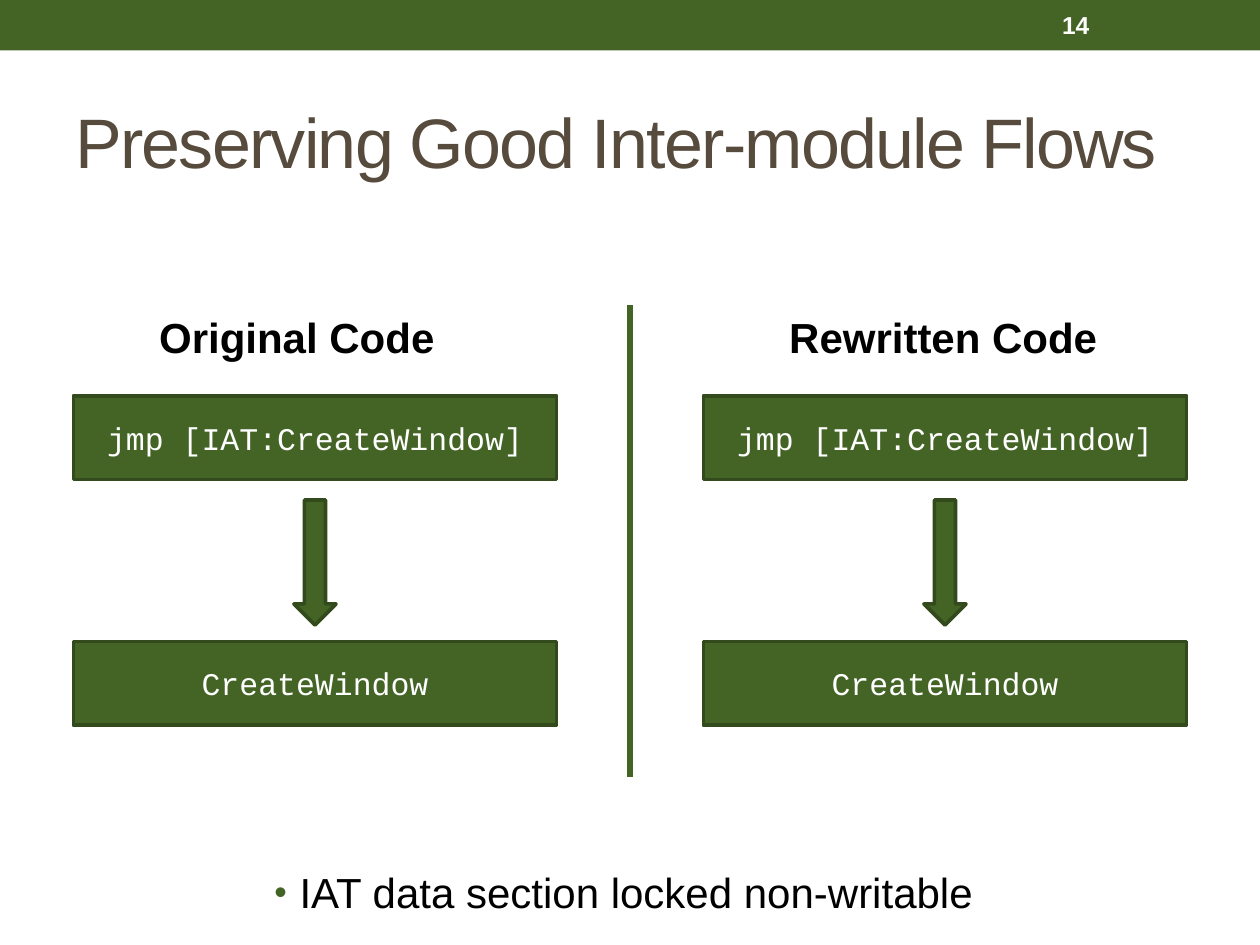
from dataclasses import dataclass

from lxml import etree
from pptx import Presentation
from pptx.dml.color import RGBColor
from pptx.enum.shapes import MSO_CONNECTOR, MSO_SHAPE
from pptx.enum.text import MSO_ANCHOR, PP_ALIGN
from pptx.oxml.ns import qn
from pptx.util import Cm, Pt

RECTANGLE = MSO_SHAPE.RECTANGLE
DOWN_ARROW = MSO_SHAPE.DOWN_ARROW
STRAIGHT = MSO_CONNECTOR.STRAIGHT
TOP = MSO_ANCHOR.TOP
MIDDLE = MSO_ANCHOR.MIDDLE
CENTER = PP_ALIGN.CENTER

GREEN = "446426"
DARK_GREEN = "324A1C"
BROWN = "564B3C"
WHITE = "FFFFFF"
BLACK = "000000"

SLIDE_WIDTH = 25.4
SLIDE_HEIGHT = 19.05
COLUMN_TOP = 6.15
COLUMN_BOTTOM = 15.67


@dataclass
class Area:
    left: float
    top: float
    width: float
    height: float

    def lengths(self):
        return Cm(self.left), Cm(self.top), Cm(self.width), Cm(self.height)


@dataclass
class Style:
    size: float
    color: str
    font: str = "Arial"
    bold: bool = False


@dataclass
class Column:
    heading: str
    center: float
    steps: tuple[str, str] = ("jmp [IAT:CreateWindow]", "CreateWindow")


HEADING = Style(24, BLACK, bold=True)
CODE = Style(18, WHITE, "Courier New")
COLUMNS = (
    Column("Original Code", SLIDE_WIDTH / 4),
    Column("Rewritten Code", SLIDE_WIDTH * 3 / 4),
)


def rgb(color: str) -> RGBColor:
    return RGBColor.from_string(color)


def write(shape, text: str, style: Style, anchor=MIDDLE):
    frame = shape.text_frame
    frame.word_wrap = True
    frame.vertical_anchor = anchor
    frame.text = text
    para = frame.paragraphs[0]
    font = para.runs[0].font
    font.name = style.font
    font.size = Pt(style.size)
    font.bold = style.bold
    font.color.rgb = rgb(style.color)
    return para


def add_text(slide, area: Area, text: str, style: Style, anchor=MIDDLE):
    box = slide.shapes.add_textbox(*area.lengths())
    return write(box, text, style, anchor)


def add_block(slide, kind, area: Area, outlined: bool = True):
    block = slide.shapes.add_shape(kind, *area.lengths())
    block.shadow.inherit = False
    block.fill.solid()
    block.fill.fore_color.rgb = rgb(GREEN)
    if outlined:
        block.line.color.rgb = rgb(DARK_GREEN)
        block.line.width = Pt(2.08)
    else:
        block.line.fill.background()
    return block


def add_divider(slide) -> None:
    middle = Cm(SLIDE_WIDTH / 2)
    divider = slide.shapes.add_connector(
        STRAIGHT, middle, Cm(COLUMN_TOP), middle, Cm(COLUMN_BOTTOM)
    )
    divider.line.color.rgb = rgb(GREEN)
    divider.line.width = Pt(3)
    etree.SubElement(divider.element.spPr, qn("a:effectLst"))


def add_column(slide, column: Column) -> None:
    def centered(top: float, width: float, height: float) -> Area:
        return Area(column.center - width / 2, top, width, height)

    add_text(slide, centered(COLUMN_TOP, 6.78, 1.27), column.heading, HEADING, TOP)
    for top, step in zip((7.98, 12.93), column.steps):
        block = add_block(slide, RECTANGLE, centered(top, 9.74, 1.69))
        write(block, step, CODE).alignment = CENTER
    add_block(slide, DOWN_ARROW, centered(10.08, 0.85, 2.52))


def add_bullet(para, color: str) -> None:
    para.space_before = Pt(5)
    properties = para._p.get_or_add_pPr()
    indent = Cm(0.51)
    properties.set("marL", str(indent))
    properties.set("indent", str(-indent))
    bullet_color = etree.SubElement(properties, qn("a:buClr"))
    etree.SubElement(bullet_color, qn("a:srgbClr"), val=color)
    etree.SubElement(properties, qn("a:buSzPct"), val="85000")
    etree.SubElement(properties, qn("a:buFont"), typeface="Arial")
    etree.SubElement(properties, qn("a:buChar"), char="•")


def main() -> None:
    deck = Presentation()
    deck.slide_width = Cm(SLIDE_WIDTH)
    deck.slide_height = Cm(SLIDE_HEIGHT)
    slide = deck.slides.add_slide(deck.slide_layouts[6])

    add_block(slide, RECTANGLE, Area(0, 0, SLIDE_WIDTH, 1.02), outlined=False)
    title = add_text(
        slide,
        Area(1.27, 1.47, 22.86, 2.74),
        "Preserving Good Inter-module Flows",
        Style(40, BROWN),
    )
    title.runs[0].font._element.set("spc", "-100")
    add_text(slide, Area(21.16, 0.05, 2.97, 0.91), "14", Style(14, WHITE, bold=True))

    add_divider(slide)
    for column in COLUMNS:
        add_column(slide, column)

    note = add_text(
        slide,
        Area(5.28, 17.35, 17.98, 1.69),
        "IAT data section locked non-writable",
        Style(24, BLACK),
        TOP,
    )
    add_bullet(note, GREEN)
    deck.save("out.pptx")


if __name__ == "__main__":
    main()
